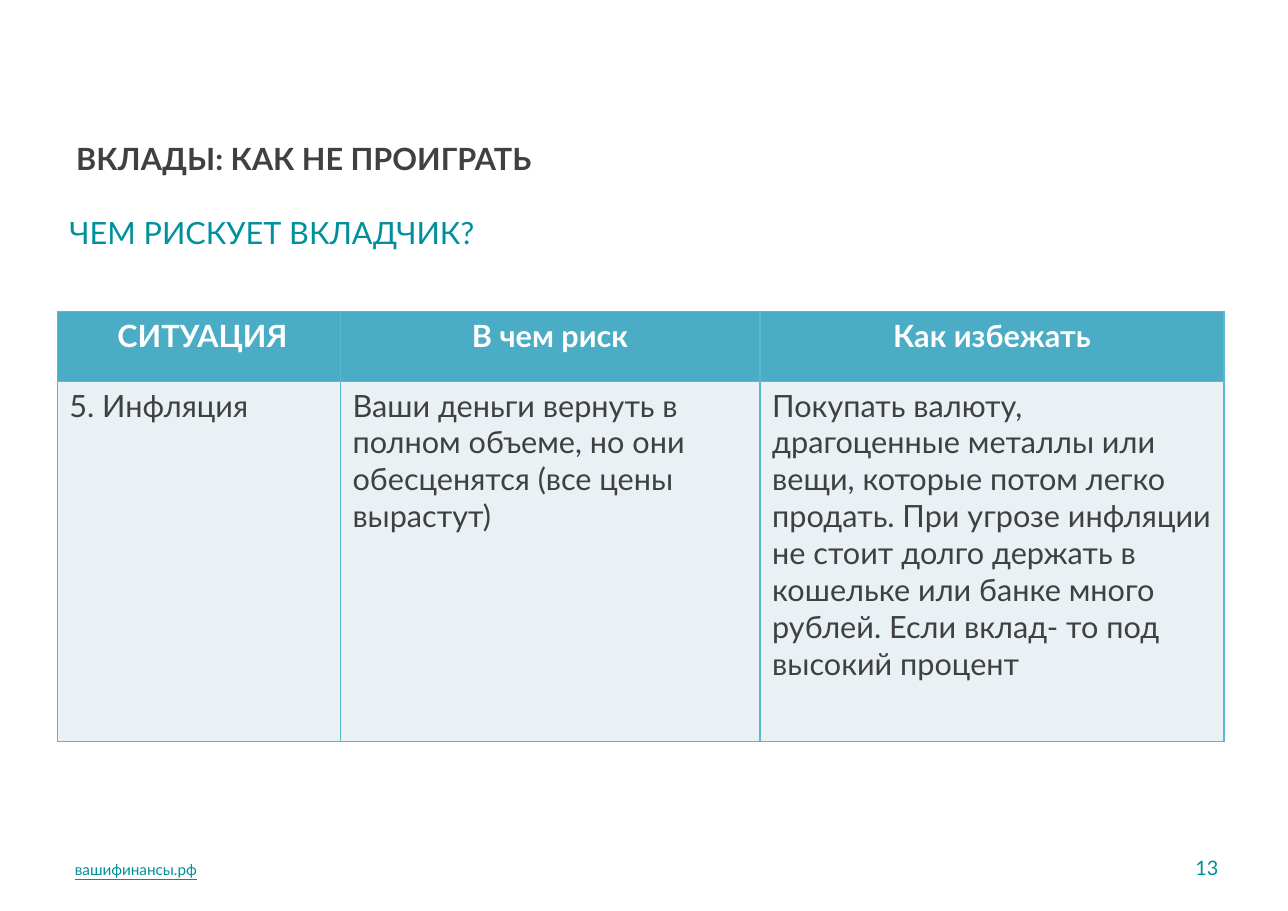
from dataclasses import dataclass

from lxml import etree
from pptx import Presentation
from pptx import util as u
from pptx.dml.color import RGBColor
from pptx.enum import text
from pptx.oxml import ns

Pt = u.Pt


@dataclass(frozen=True)
class Theme:
    font: str = "Lato"
    dark: str = "404040"
    teal: str = "00909B"
    white: str = "FFFFFF"
    header: str = "4BACC6"
    body: str = "E9F1F5"
    border: str = "5AB8CB"
    main_size: float = 20
    number_size: float = 13
    site_size: float = 10
    inset_x: float = 8
    inset_y: float = 3.6


THEME = Theme()
COLUMN_WIDTHS = (185, 274.3, 303.2)
ROW_HEIGHTS = (45.4, 235.4)
RISKS = (
    (" СИТУАЦИЯ", "В чем риск", "Как избежать"),
    (
        "5. Инфляция",
        "Ваши деньги вернуть в полном объеме, но они обесценятся (все цены вырастут)",
        "Покупать валюту, драгоценные металлы или вещи, которые потом легко продать. "
        "При угрозе инфляции не стоит долго держать в кошельке или банке много рублей. "
        "Если вклад- то под высокий процент",
    ),
)


def set_insets(holder):
    holder.margin_left = holder.margin_right = Pt(THEME.inset_x)
    holder.margin_top = holder.margin_bottom = Pt(THEME.inset_y)


def write(frame, wording, color, size=THEME.main_size, bold=False,
          align=text.PP_ALIGN.LEFT, underline=False):
    frame.word_wrap = True
    line = frame.paragraphs[0]
    line.text = wording
    line.alignment = align
    font = line.font
    font.name = THEME.font
    font.size = Pt(size)
    font.bold = bold
    font.underline = underline
    font.color.rgb = RGBColor.from_string(color)


def add_label(slide, place, wording, color, anchor=text.MSO_ANCHOR.TOP, **style):
    frame = slide.shapes.add_textbox(*map(Pt, place)).text_frame
    set_insets(frame)
    frame.vertical_anchor = anchor
    write(frame, wording, color, **style)


def add_borders(cell):
    properties = cell._tc.get_or_add_tcPr()
    for side in ("a:lnL", "a:lnR", "a:lnT", "a:lnB"):
        edge = etree.SubElement(properties, ns.qn(side), w=str(Pt(1)))
        fill = etree.SubElement(edge, ns.qn("a:solidFill"))
        etree.SubElement(fill, ns.qn("a:srgbClr"), val=THEME.border)


def add_risk_table(slide, left, top):
    place = (left, top, sum(COLUMN_WIDTHS), sum(ROW_HEIGHTS))
    table = slide.shapes.add_table(
        len(RISKS), len(COLUMN_WIDTHS), *map(Pt, place)).table
    for column, width in zip(table.columns, COLUMN_WIDTHS):
        column.width = Pt(width)
    for row, height, wordings in zip(table.rows, ROW_HEIGHTS, RISKS):
        row.height = Pt(height)
        is_header = wordings is RISKS[0]
        for cell, wording in zip(row.cells, wordings):
            set_insets(cell)
            add_borders(cell)
            cell.fill.solid()
            cell.fill.fore_color.rgb = RGBColor.from_string(
                THEME.header if is_header else THEME.body)
            write(cell.text_frame, wording,
                  THEME.white if is_header else THEME.dark, bold=is_header,
                  align=text.PP_ALIGN.CENTER if is_header else text.PP_ALIGN.LEFT)


def main():
    deck = Presentation()
    deck.slide_width, deck.slide_height = Pt(841.68), Pt(595.44)
    slide = deck.slides.add_slide(deck.slide_layouts[6])
    middle = text.MSO_ANCHOR.MIDDLE

    add_label(slide, (41, 552.2, 285.8, 31.7), "вашифинансы.рф", THEME.teal,
              middle, size=THEME.site_size, underline=True)
    add_label(slide, (41.8, 87.8, 757.4, 69.1), "ВКЛАДЫ: КАК НЕ ПРОИГРАТЬ",
              THEME.dark, bold=True)
    add_label(slide, (37.4, 136.1, 762.5, 41.8), "ЧЕМ РИСКУЕТ ВКЛАДЧИК?",
              THEME.teal)
    add_label(slide, (741.6, 551.5, 62.6, 31.7), "13", THEME.teal, middle,
              size=THEME.number_size, align=text.PP_ALIGN.RIGHT)
    add_risk_table(slide, 37.4, 203.8)

    deck.save("out.pptx")


if __name__ == "__main__":
    main()
